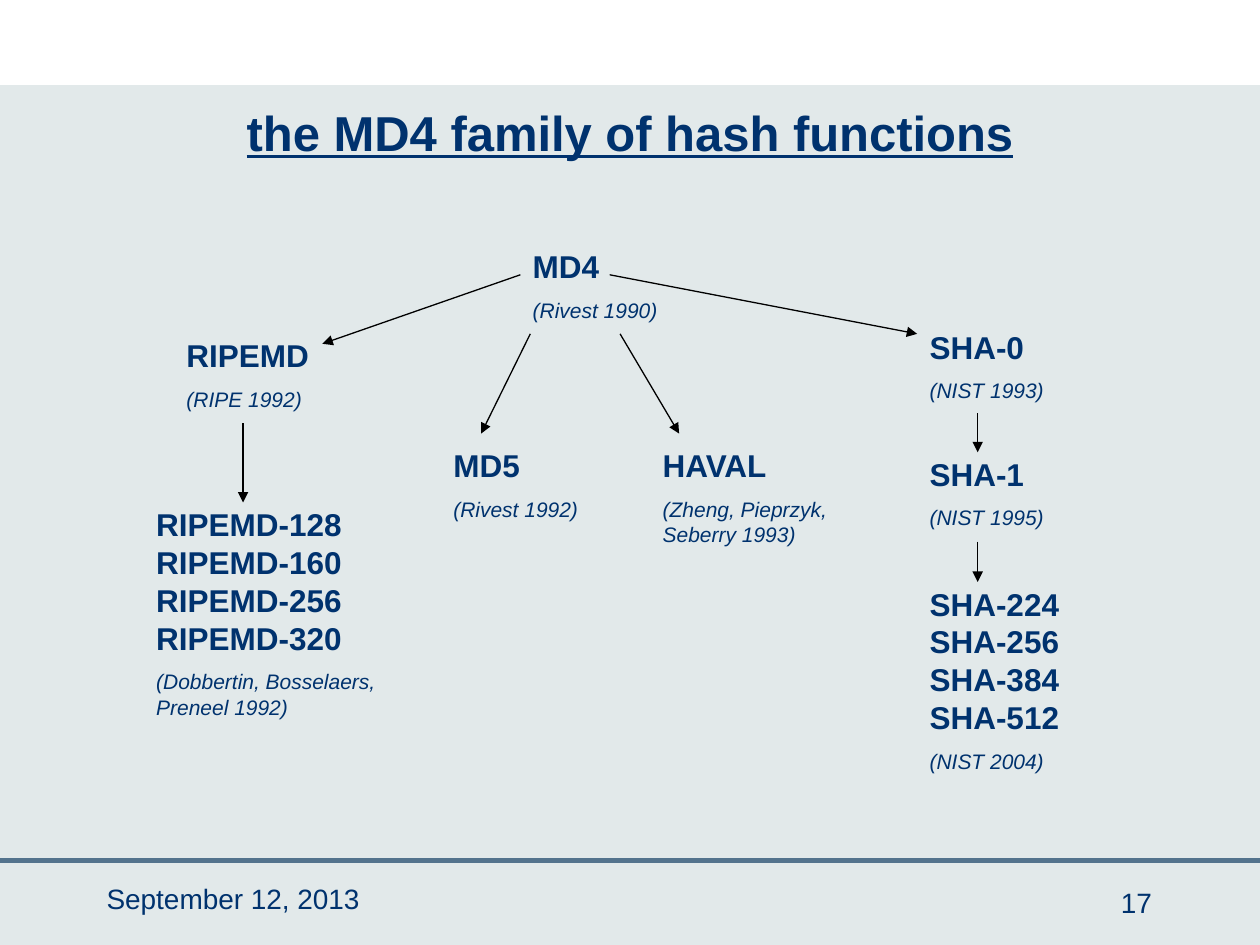
from lxml import etree
from pptx import Presentation
from pptx import util as u
from pptx.dml.color import RGBColor
from pptx.enum import shapes, text
from pptx.oxml.ns import qn

NAVY = "00326E"
NODES = [
    (7.59, 0, 3.2, 1.78, "MD4", "(Rivest 1990)"),
    (0.61, 1.8, 3.2, 1.78, "RIPEMD", "(RIPE 1992)"),
    (0, 5.21, 5.21, 4.57, "RIPEMD-128 RIPEMD-160 RIPEMD-256 RIPEMD-320",
     "(Dobbertin, Bosselaers, Preneel 1992)"),
    (5.99, 4.01, 3.2, 1.78, "MD5", "(Rivest 1992)"),
    (10.21, 4.01, 3.99, 2.29, "HAVAL", "(Zheng, Pieprzyk, Seberry 1993)"),
    (15.59, 1.63, 3.2, 1.78, "SHA-0", "(NIST 1993)"),
    (15.59, 4.19, 3.2, 1.78, "SHA-1", "(NIST 1995)"),
    (15.59, 6.81, 3.2, 4.06, "SHA-224 SHA-256 SHA-384 SHA-512", "(NIST 2004)"),
]
ARROWS = [
    (7.59, 0.69, 3.6, 2.08),
    (7.79, 1.88, 6.8, 3.89),
    (9.6, 1.88, 10.79, 3.89),
    (9.39, 0.69, 15.59, 1.88),
    (2, 3.68, 2, 5.28),
    (16.81, 3.48, 16.81, 4.27),
    (16.81, 6.07, 16.81, 6.88),
]


def paint(hue):
    return RGBColor.from_string(hue)


def frame(slide, x, y, w, h):
    box = slide.shapes.add_textbox(u.Cm(x), u.Cm(y), u.Cm(w), u.Cm(h))
    box.text_frame.word_wrap = True
    return box.text_frame


def write(para, words, size, bold=False, slant=False, align=text.PP_ALIGN.LEFT):
    para.text = words
    para.alignment = align
    font = para.font
    font.name, font.size = "Arial", u.Pt(size)
    font.bold, font.italic = bold, slant
    font.color.rgb = paint(NAVY)


def draw_line(slide, x, y, to_x, to_y, hue, width):
    line = slide.shapes.add_connector(
        shapes.MSO_CONNECTOR.STRAIGHT, u.Cm(x), u.Cm(y), u.Cm(to_x), u.Cm(to_y))
    line.line.color.rgb = paint(hue)
    line.line.width = u.Pt(width)
    etree.SubElement(line._element.spPr, qn("a:effectLst"))
    return line


def add_arrow(slide, x, y, to_x, to_y):
    line = draw_line(slide, x, y, to_x, to_y, "000000", 0.75)
    etree.SubElement(line.line._get_or_add_ln(), qn("a:tailEnd"), type="triangle")


def add_node(slide, x, y, w, h, name, source):
    body = frame(slide, x, y, w, h)
    head, note = body.paragraphs[0], body.add_paragraph()
    write(head, name, 18, bold=True)
    write(note, source, 12, slant=True)
    head.line_spacing = u.Pt(21.6)
    note.line_spacing = u.Pt(14.4)
    note.space_before = u.Pt(7.2)


def add_header(slide, x, y, w, h):
    band = slide.shapes.add_shape(
        shapes.MSO_SHAPE.RECTANGLE, u.Cm(x), u.Cm(y), u.Cm(w), u.Cm(h))
    band.shadow.inherit = False
    band.fill.solid()
    band.fill.fore_color.rgb = paint("FFFFFF")
    band.line.color.rgb = paint("FFFFFF")
    band.line.width = u.Pt(0.75)


def add_title(slide, x, y, w, h):
    body = frame(slide, x, y, w, h)
    body.vertical_anchor = text.MSO_ANCHOR.MIDDLE
    para = body.paragraphs[0]
    write(para, "the MD4 family of hash functions", 28, bold=True,
          align=text.PP_ALIGN.CENTER)
    para.font.underline = True


def add_tree(slide, x, y):
    for left, top, *rest in NODES:
        add_node(slide, x + left, y + top, *rest)
    for left, top, to_x, to_y in ARROWS:
        add_arrow(slide, x + left, y + top, x + to_x, y + to_y)


def add_footer(slide, x, y, w):
    draw_line(slide, x, y, x + w, y, "53738D", 3)
    date = frame(slide, x + 1.9, y + 0.3, 6, 1.27)
    write(date.paragraphs[0], "September 12, 2013", 16)
    page = frame(slide, x + 21.11, y + 0.38, 2.36, 1.07)
    write(page.paragraphs[0], "17", 16, align=text.PP_ALIGN.RIGHT)


def main():
    deck = Presentation()
    deck.slide_width, deck.slide_height = u.Cm(25.4), u.Cm(19.05)
    slide = deck.slides.add_slide(deck.slide_layouts[6])
    slide.background.fill.solid()
    slide.background.fill.fore_color.rgb = paint("E2E9EA")
    add_header(slide, 0, 0, 25.4, 1.7)
    add_title(slide, 3.86, 1.07, 17.68, 3.18)
    add_tree(slide, 2.9, 4.85)
    add_footer(slide, 0, 17.35, 25.4)
    deck.save("out.pptx")


if __name__ == "__main__":
    main()
